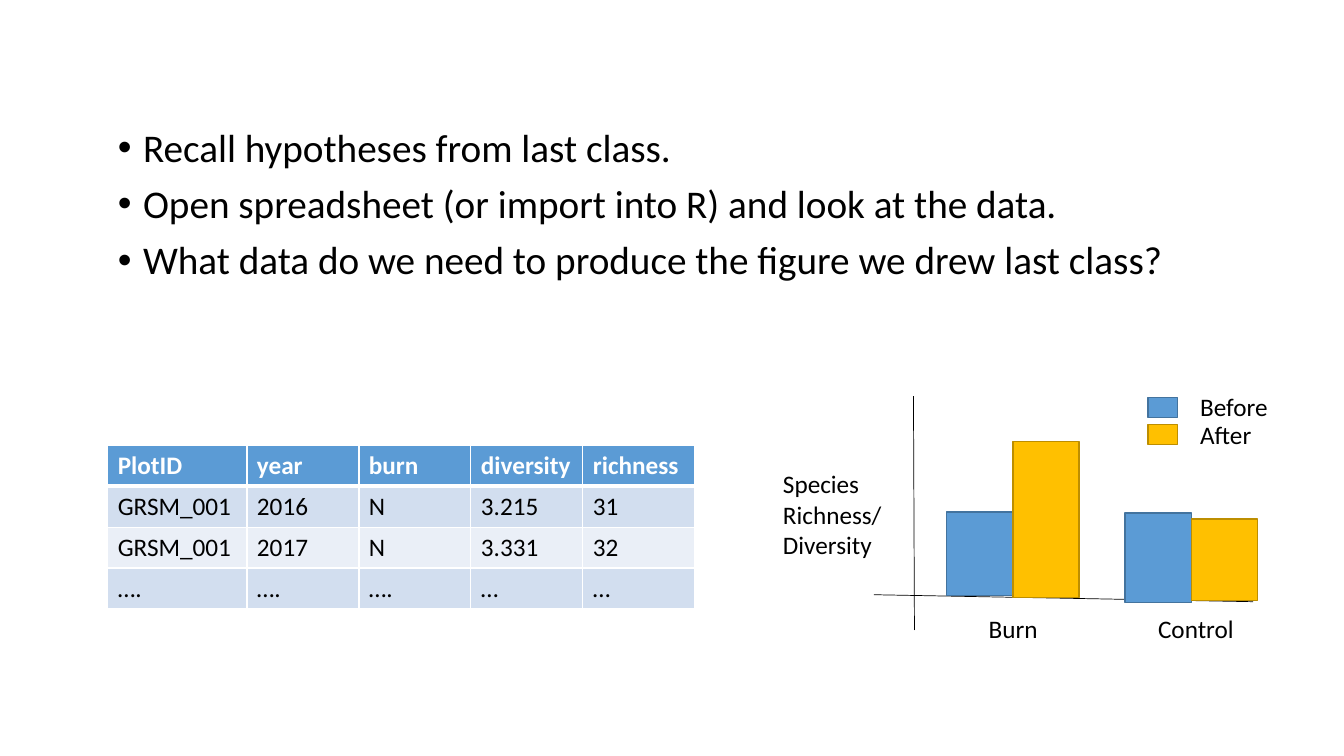
from lxml import etree
from pptx import Presentation
from pptx.dml.color import RGBColor
from pptx.enum.shapes import MSO_CONNECTOR, MSO_SHAPE
from pptx.enum.text import MSO_ANCHOR, PP_ALIGN
from pptx.oxml.ns import qn
from pptx.util import Pt

RECTANGLE = MSO_SHAPE.RECTANGLE
STRAIGHT = MSO_CONNECTOR.STRAIGHT
TOP = MSO_ANCHOR.TOP
LEFT, CENTER = PP_ALIGN.LEFT, PP_ALIGN.CENTER

COLORS = {
    "text": "000000",
    "white": "FFFFFF",
    "before": "5B9BD5",
    "before_line": "43739E",
    "after": "FFC000",
    "after_line": "BD8E00",
    "band_dark": "D2DEEF",
    "band_light": "EAEFF7",
}
QUESTIONS = [
    "Recall hypotheses from last class.",
    "Open spreadsheet (or import into R) and look at the data.",
    "What data do we need to produce the figure we drew last class?",
]
PLOT_ROWS = [
    ["PlotID", "year", "burn", "diversity", "richness"],
    ["GRSM_001", "2016", "N", "3.215", "31"],
    ["GRSM_001", "2017", "N", "3.331", "32"],
    ["….", "….", "….", "…", "…"],
]
COLUMN_WIDTHS = [99.4, 80, 80, 80, 80]
BAR_WIDTH = 47.3
BAR_GROUPS = [
    ("Burn", 124, 171.5, [("before", 90, 59.8), ("after", 39.6, 111.6)]),
    ("Control", 251.5, 302, [("before", 90.7, 64), ("after", 95, 58.3)]),
]
LEGEND = [("before", "Before"), ("after", "After")]


def color(name):
    """Return the named colour."""
    return RGBColor.from_string(COLORS[name])


def write_text(frame, lines, size=18, fill="text", bold=False, align=LEFT):
    """Write one paragraph per line and return the paragraphs."""
    frame.text = "\n".join(lines)
    for paragraph in frame.paragraphs:
        paragraph.alignment = align
        font = paragraph.runs[0].font
        font.name, font.size, font.bold = "Calibri", Pt(size), bold
        font.color.rgb = color(fill)
    return frame.paragraphs


def add_label(slide, lines, left, top, width, height, wrap=True, **style):
    """Add a text box."""
    box = slide.shapes.add_textbox(Pt(left), Pt(top), Pt(width), Pt(height))
    box.text_frame.word_wrap = wrap
    write_text(box.text_frame, lines, **style)


def add_block(slide, series, left, top, width, height):
    """Add a bar or legend key in the colours of its series."""
    block = slide.shapes.add_shape(RECTANGLE, Pt(left), Pt(top), Pt(width), Pt(height))
    block.shadow.inherit = False
    block.fill.solid()
    block.fill.fore_color.rgb = color(series)
    block.line.color.rgb = color(series + "_line")
    block.line.width = Pt(1)


def add_axis(slide, start_x, start_y, end_x, end_y):
    """Add a thin hand-drawn axis."""
    axis = slide.shapes.add_connector(
        STRAIGHT, Pt(start_x), Pt(start_y), Pt(end_x), Pt(end_y))
    axis.line.color.rgb = color("text")
    axis.line.width = Pt(0.5)
    etree.SubElement(axis._element.spPr, qn("a:effectLst"))


def add_questions(slide, left, top, width, height):
    """Fill the body placeholder with the bulleted questions."""
    title = slide.shapes.title._element
    title.getparent().remove(title)
    body = slide.placeholders[1]
    body.left, body.top, body.width, body.height = map(Pt, (left, top, width, height))
    body.text_frame.vertical_anchor = TOP
    for paragraph in write_text(body.text_frame, QUESTIONS, size=28):
        paragraph.line_spacing = 0.9
        paragraph.space_before = Pt(10)
        properties = paragraph._p.get_or_add_pPr()
        properties.set("marL", str(Pt(18)))
        properties.set("indent", str(-Pt(18)))
        etree.SubElement(properties, qn("a:buFont"), typeface="Arial")
        etree.SubElement(properties, qn("a:buChar"), char="•")


def add_cell_borders(cell, bottom_width):
    """Give a cell white borders."""
    properties = cell._tc.get_or_add_tcPr()
    for side, width in (("L", 1), ("R", 1), ("T", 1), ("B", bottom_width)):
        line = etree.SubElement(properties, qn("a:ln" + side), w=str(Pt(width)))
        fill = etree.SubElement(line, qn("a:solidFill"))
        etree.SubElement(fill, qn("a:srgbClr"), val=COLORS["white"])


def add_plot_table(slide, left, top, row_height):
    """Add the table of plot data."""
    table = slide.shapes.add_table(
        len(PLOT_ROWS), len(COLUMN_WIDTHS), Pt(left), Pt(top),
        Pt(sum(COLUMN_WIDTHS)), Pt(row_height * len(PLOT_ROWS))).table
    for column, width in zip(table.columns, COLUMN_WIDTHS):
        column.width = Pt(width)
    for row_index, values in enumerate(PLOT_ROWS):
        header = row_index == 0
        band = "before" if header else "band_dark" if row_index % 2 else "band_light"
        table.rows[row_index].height = Pt(row_height)
        for column_index, value in enumerate(values):
            cell = table.cell(row_index, column_index)
            add_cell_borders(cell, 3 if header else 1)
            cell.fill.solid()
            cell.fill.fore_color.rgb = color(band)
            write_text(cell.text_frame, [value], bold=header,
                       fill="white" if header else "text")


def add_sketch(slide, left, top):
    """Add the sketched bar figure with its axes and labels."""
    add_axis(slide, left + 100.3, top + 7.2, left + 101, top + 174.2)
    add_axis(slide, left + 343, top + 154, left + 72, top + 149)
    add_label(slide, ["Species Richness/", "Diversity"], left, top + 55.4, 85.7, 72.7)
    for name, bar_left, center, bars in BAR_GROUPS:
        for index, (series, bar_top, height) in enumerate(bars):
            add_block(slide, series, left + bar_left + index * BAR_WIDTH,
                      top + bar_top, BAR_WIDTH, height)
        add_label(slide, [name], left + center - 45, top + 159, 90, 29, align=CENTER)


def add_legend(slide, left, top):
    """Add the legend keys and names."""
    for index, (series, name) in enumerate(LEGEND):
        add_block(slide, series, left, top + 8 + index * 19.5, 21, 14.4)
        add_label(slide, [name], left + 30.2, top + index * 20.2, 63, 29, wrap=False)


def main():
    """Build and save the presentation."""
    presentation = Presentation()
    presentation.slide_width, presentation.slide_height = Pt(960), Pt(540)
    slide = presentation.slides.add_slide(presentation.slide_layouts[1])
    add_questions(slide, 77, 88, 828, 343)
    add_sketch(slide, 552.2, 275.8)
    add_plot_table(slide, 77, 318.2, 29.2)
    add_legend(slide, 820, 275.8)
    presentation.save("out.pptx")


if __name__ == "__main__":
    main()
